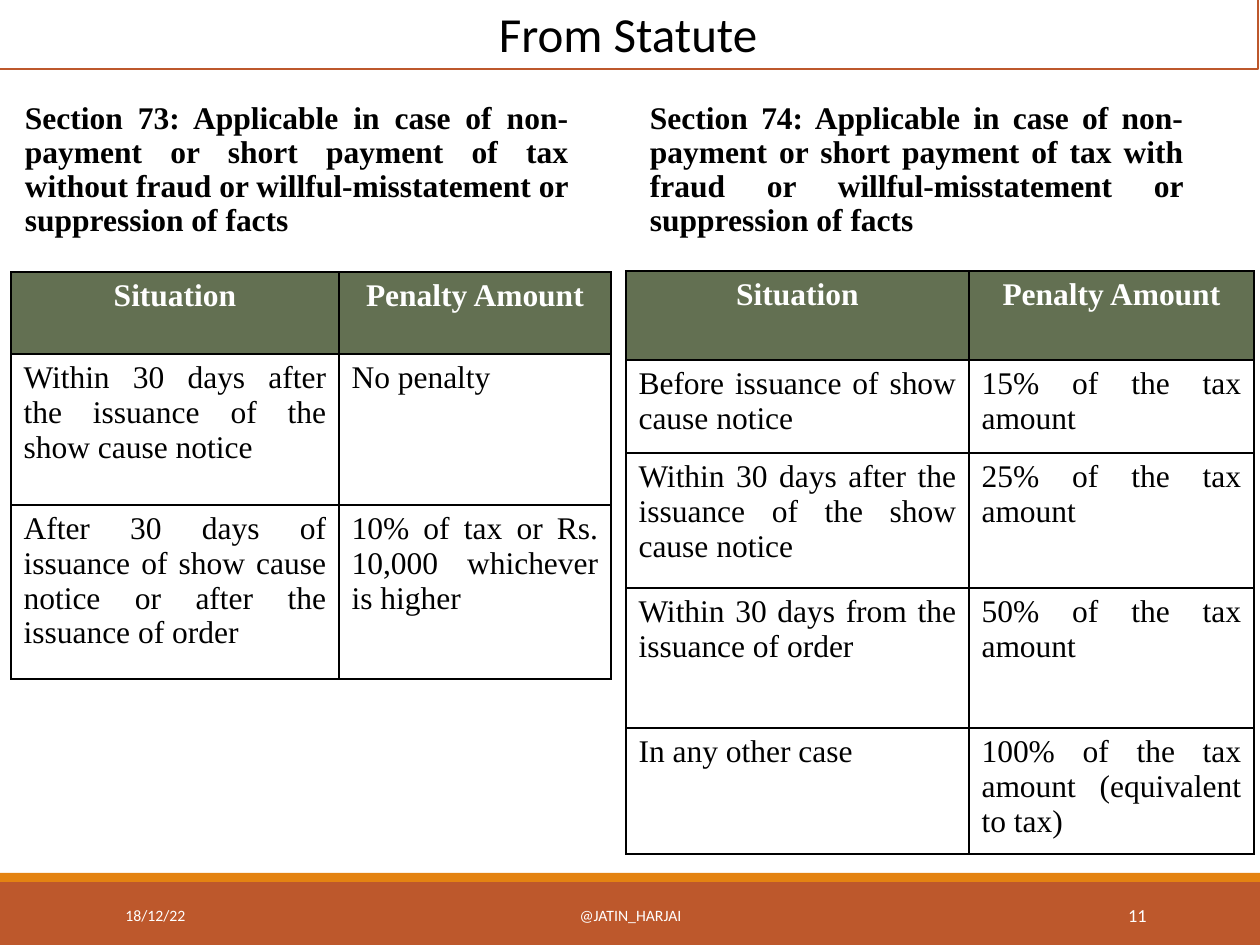
from lxml import etree
from pptx import Presentation
from pptx import util as u
from pptx.dml.color import RGBColor
from pptx.enum import shapes, text
from pptx.oxml.ns import qn

PX = 914400 // 126
WHITE, BLACK = RGBColor(255, 255, 255), RGBColor(0, 0, 0)
RUST, AMBER = RGBColor(0xBD, 0x58, 0x2C), RGBColor(0xE4, 0x83, 0x12)
OLIVE = RGBColor(0x63, 0x70, 0x52)
SANS, SERIF = "Calibri", "Times New Roman"
LEFT, MID, RIGHT, FULL = (text.PP_ALIGN.LEFT, text.PP_ALIGN.CENTER,
                          text.PP_ALIGN.RIGHT, text.PP_ALIGN.JUSTIFY)

TITLE = "From Statute"
HEAD = ("Situation", "Penalty Amount")
PARTS = [
    dict(note="Section 73: Applicable in case of non-payment or short payment of tax "
              "without fraud or willful-misstatement or suppression of facts",
         box=(0, 96, 581, 168), at=(11, 272), cols=(328, 272), rows=(82, 151, 174),
         data=[("Within 30 days after the issuance of the show cause notice", "No penalty"),
               ("After 30 days of issuance of show cause notice or after the issuance of order",
                "10% of tax or Rs. 10,000 whichever is higher")]),
    dict(note="Section 74: Applicable in case of non-payment or short payment of tax "
              "with fraud or willful-misstatement or suppression of facts",
         box=(625, 96, 571, 168), at=(626, 271), cols=(343, 285),
         rows=(89, 93, 135, 140, 126),
         data=[("Before issuance of show cause notice", "15% of the tax amount"),
               ("Within 30 days after the issuance of the show cause notice",
                "25% of the tax amount"),
               ("Within 30 days from the issuance of order", "50% of the tax amount"),
               ("In any other case", "100% of the tax amount (equivalent to tax)")]),
]
BARS = [((0, 882, 1260, 63), RUST), ((0, 873, 1260, 9), AMBER)]
FOOT = [("18/12/22", (113, 890, 256, 50), 9, LEFT),
        ("@JATIN_HARJAI", (381, 890, 499, 50), 9, MID),
        ("11", (1023, 890, 136, 50), 10.5, RIGHT)]


def emu(nums):
    return [n * PX for n in nums]


def write(frame, words, align, **font):
    para = frame.paragraphs[0]
    para.alignment = align
    run = para.add_run()
    run.text = words
    color = font.pop("color")
    for key, val in font.items():
        setattr(run.font, key, val)
    run.font.color.rgb = color
    return para


def add_bar(box, fill, line=None):
    bar = slide.shapes.add_shape(shapes.MSO_SHAPE.RECTANGLE, *emu(box))
    bar.shadow.inherit = False
    bar.fill.solid()
    bar.fill.fore_color.rgb = fill
    if line:
        bar.line.color.rgb = line
        bar.line.width = u.Pt(1.25)
    else:
        bar.line.fill.background()
    return bar


def add_box(box):
    frame = slide.shapes.add_textbox(*emu(box)).text_frame
    frame.word_wrap = True
    return frame


def edge(cell):
    """Draw a black one-point border on all four sides."""
    props = cell._tc.get_or_add_tcPr()
    for side in "LRTB":
        line = etree.SubElement(props, qn("a:ln" + side), w=str(u.Pt(1)))
        fill = etree.SubElement(line, qn("a:solidFill"))
        etree.SubElement(fill, qn("a:srgbClr"), val=str(BLACK))


def add_grid(part):
    rows, cols = part["rows"], part["cols"]
    size = (sum(cols), sum(rows))
    grid = slide.shapes.add_table(len(rows), len(cols), *emu(part["at"] + size)).table
    for col, wide in zip(grid.columns, cols):
        col.width = wide * PX
    for row, high in zip(grid.rows, rows):
        row.height = high * PX
    for r, line in enumerate([HEAD] + part["data"]):
        for c, words in enumerate(line):
            cell = grid.cell(r, c)
            top = r == 0
            edge(cell)
            cell.fill.solid()
            cell.fill.fore_color.rgb = OLIVE if top else WHITE
            write(cell.text_frame, words, MID if top else FULL, name=SERIF,
                  size=u.Pt(18), bold=top, color=WHITE if top else BLACK)


def add_note(part):
    para = write(add_box(part["box"]), part["note"], FULL, name=SERIF,
                 size=u.Pt(18), bold=True, color=BLACK)
    form = dict(line_spacing=0.9, space_before=u.Pt(12), space_after=u.Pt(2))
    for key, val in form.items():
        setattr(para, key, val)
    para._p.get_or_add_pPr().set("marL", str(u.Inches(0.1)))


deck = Presentation()
deck.slide_width, deck.slide_height = u.Inches(10), u.Inches(7.5)
slide = deck.slides.add_slide(deck.slide_layouts[6])

for box, fill in BARS:
    add_bar(box, fill)
for words, box, size, align in FOOT:
    frame = add_box(box)
    frame.vertical_anchor = text.MSO_ANCHOR.MIDDLE
    write(frame, words, align, name=SANS, size=u.Pt(size), color=WHITE)

title = add_bar((-2, -3, 1260, 72), WHITE, RUST).text_frame
title.vertical_anchor = text.MSO_ANCHOR.TOP
write(title, TITLE, MID, name=SANS, size=u.Pt(28), color=BLACK)

for part in PARTS:
    add_grid(part)
    add_note(part)

deck.save("out.pptx")
